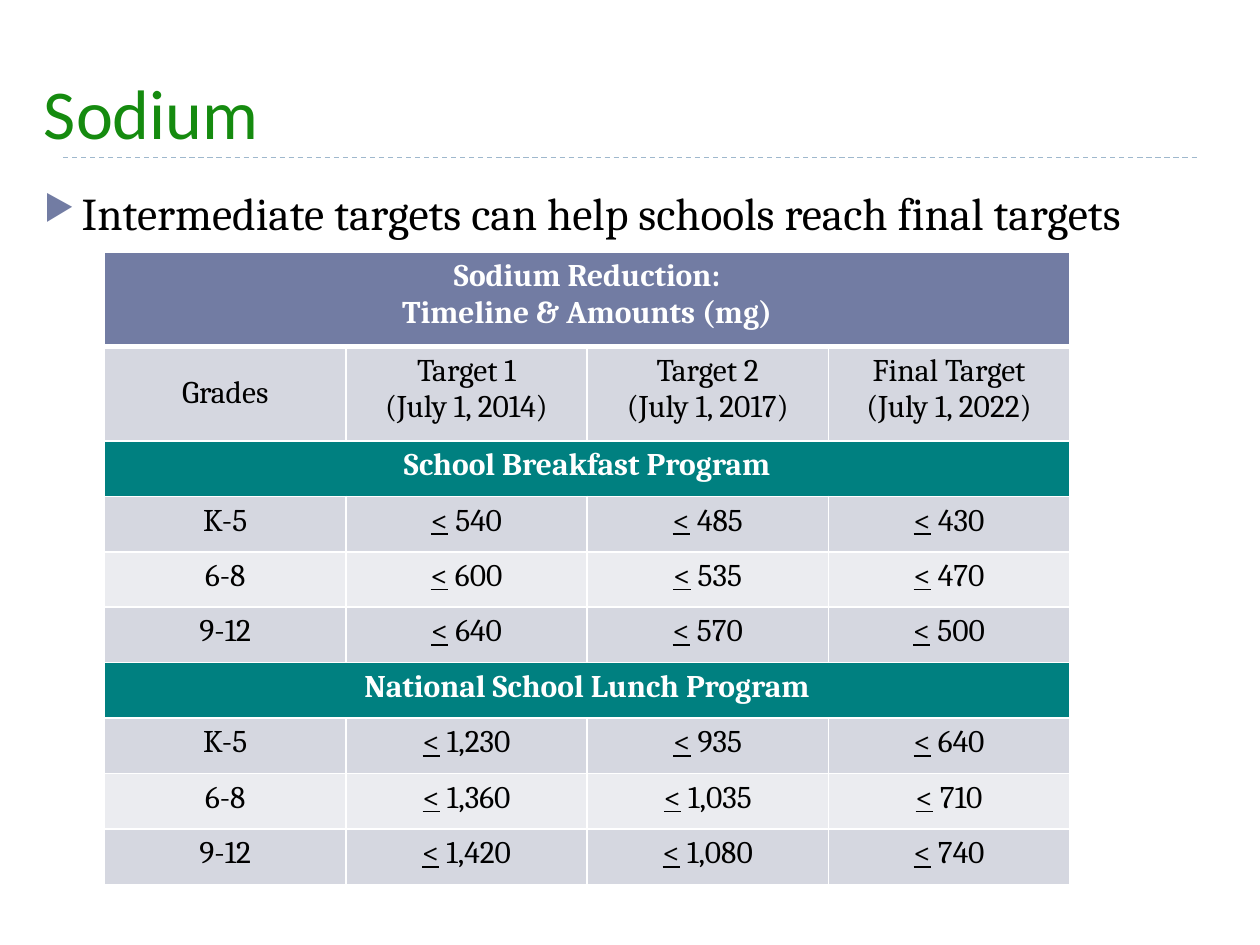
from dataclasses import dataclass

from lxml.etree import SubElement
from pptx import Presentation
from pptx.dml.color import RGBColor as Color
from pptx.enum.dml import MSO_LINE_DASH_STYLE as Dash
from pptx.enum.shapes import MSO_CONNECTOR as Connector
from pptx.enum.text import MSO_ANCHOR as Anchor, PP_ALIGN as Align
from pptx.oxml.ns import qn
from pptx.util import Inches, Pt


@dataclass(frozen=True)
class Theme:
    title: str = "158B0F"
    text: str = "000000"
    light: str = "FFFFFF"
    accent: str = "727CA3"
    section: str = "008080"
    band_dark: str = "D5D7E0"
    band_light: str = "EBECF0"
    rule: str = "9FB8CD"
    heading_font: str = "Calibri"
    body_font: str = "Cambria"
    title_size: int = 40
    body_size: int = 26
    table_size: int = 18


THEME = Theme()
TABLE_TITLE = "Sodium Reduction:\nTimeline & Amounts (mg)"
COLUMN_HEADS = ["Grades", "Target 1\n(July 1, 2014)", "Target 2\n(July 1, 2017)",
                "Final Target\n(July 1, 2022)"]
PROGRAMS = {
    "School Breakfast Program": [
        ("K-5", "540", "485", "430"),
        ("6-8", "600", "535", "470"),
        ("9-12", "640", "570", "500"),
    ],
    "National School Lunch Program": [
        ("K-5", "1,230", "935", "640"),
        ("6-8", "1,360", "1,035", "710"),
        ("9-12", "1,420", "1,080", "740"),
    ],
}


def write_text(frame, text, *, size, color=THEME.text, font=THEME.body_font,
               bold=False, align=Align.LEFT, anchor=Anchor.TOP, bullet=False):
    """Write one paragraph per line; a leading "<" is underlined to mean "at most"."""
    frame.word_wrap = True
    frame.vertical_anchor = anchor
    for index, line in enumerate(text.split("\n")):
        para = frame.add_paragraph() if index else frame.paragraphs[0]
        para.alignment = align
        if bullet:
            add_bullet(para)
        parts = ["<", line[1:]] if line.startswith("<") else [line]
        for part in parts:
            span = para.add_run()
            span.text = part
            span.font.name = font
            span.font.size = Pt(size)
            span.font.bold = bold
            span.font.underline = part == "<"
            span.font.color.rgb = Color.from_string(color)


def add_bullet(para):
    props = para._p.get_or_add_pPr()
    props.set("marL", str(Inches(0.3)))
    props.set("indent", str(-Inches(0.3)))
    color = SubElement(props, qn("a:buClr"))
    SubElement(color, qn("a:srgbClr"), val=THEME.accent)
    SubElement(props, qn("a:buSzPct"), val="76000")
    SubElement(props, qn("a:buChar"), char="▶")


def add_text_box(page, left, top, width, height, text, **style):
    box = page.shapes.add_textbox(Inches(left), Inches(top), Inches(width), Inches(height))
    write_text(box.text_frame, text, **style)


def add_title_rule(page):
    rule = page.shapes.add_connector(Connector.STRAIGHT, Inches(0.5), Inches(1.25),
                                     Inches(9.5), Inches(1.25))
    rule.line.color.rgb = Color.from_string(THEME.rule)
    rule.line.width = Pt(0.75)
    rule.line.dash_style = Dash.DASH
    SubElement(rule._element.spPr, qn("a:effectLst"))


def set_borders(cell, top=1, bottom=1):
    props = cell._tc.get_or_add_tcPr()
    for side, width in {"L": 1, "R": 1, "T": top, "B": bottom}.items():
        line = SubElement(props, qn(f"a:ln{side}"), w=str(Pt(width)))
        fill = SubElement(line, qn("a:solidFill"))
        SubElement(fill, qn("a:srgbClr"), val=THEME.light)


def fill_cell(cell, text, fill, **style):
    cell.fill.solid()
    cell.fill.fore_color.rgb = Color.from_string(fill)
    write_text(cell.text_frame, text, size=THEME.table_size, align=Align.CENTER, **style)
    cell.vertical_anchor = style.get("anchor", Anchor.TOP)


def fill_banner(table, row, text, fill):
    """Fill a heading that spans the whole row."""
    first = table.cell(row, 0)
    first.merge(table.cell(row, len(table.columns) - 1))
    fill_cell(first, text, fill, color=THEME.light, bold=True)


def add_sodium_table(page):
    row_count = 2 + sum(1 + len(grades) for grades in PROGRAMS.values())
    table = page.shapes.add_table(row_count, len(COLUMN_HEADS), Inches(0.83), Inches(2),
                                  Inches(7.66), Inches(5)).table
    for index, row in enumerate(table.rows):
        row.height = Inches(0.75 if index < 2 else 0.44)
        for cell in row.cells:
            set_borders(cell, top=3 if index == 1 else 1, bottom=3 if index == 0 else 1)

    fill_banner(table, 0, TABLE_TITLE, THEME.accent)
    for column, head in enumerate(COLUMN_HEADS):
        fill_cell(table.cell(1, column), head, THEME.band_dark,
                  anchor=Anchor.TOP if column else Anchor.MIDDLE)

    row = 2
    for program, grades in PROGRAMS.items():
        fill_banner(table, row, program, THEME.section)
        for index, (grade, *limits) in enumerate(grades):
            row += 1
            band = THEME.band_light if index % 2 else THEME.band_dark
            for column, text in enumerate([grade, *(f"< {limit}" for limit in limits)]):
                fill_cell(table.cell(row, column), text, band)
        row += 1


def main():
    deck = Presentation()
    deck.slide_width, deck.slide_height = Inches(10), Inches(7.5)
    page = deck.slides.add_slide(deck.slide_layouts[6])
    add_title_rule(page)
    add_text_box(page, 0.25, -0.08, 7.58, 1.35, "Sodium", size=THEME.title_size,
                 color=THEME.title, font=THEME.heading_font, anchor=Anchor.BOTTOM)
    add_text_box(page, 0.25, 1.42, 9.33, 4.58,
                 "Intermediate targets can help schools reach final targets",
                 size=THEME.body_size, bullet=True)
    add_sodium_table(page)
    deck.save("out.pptx")


if __name__ == "__main__":
    main()
